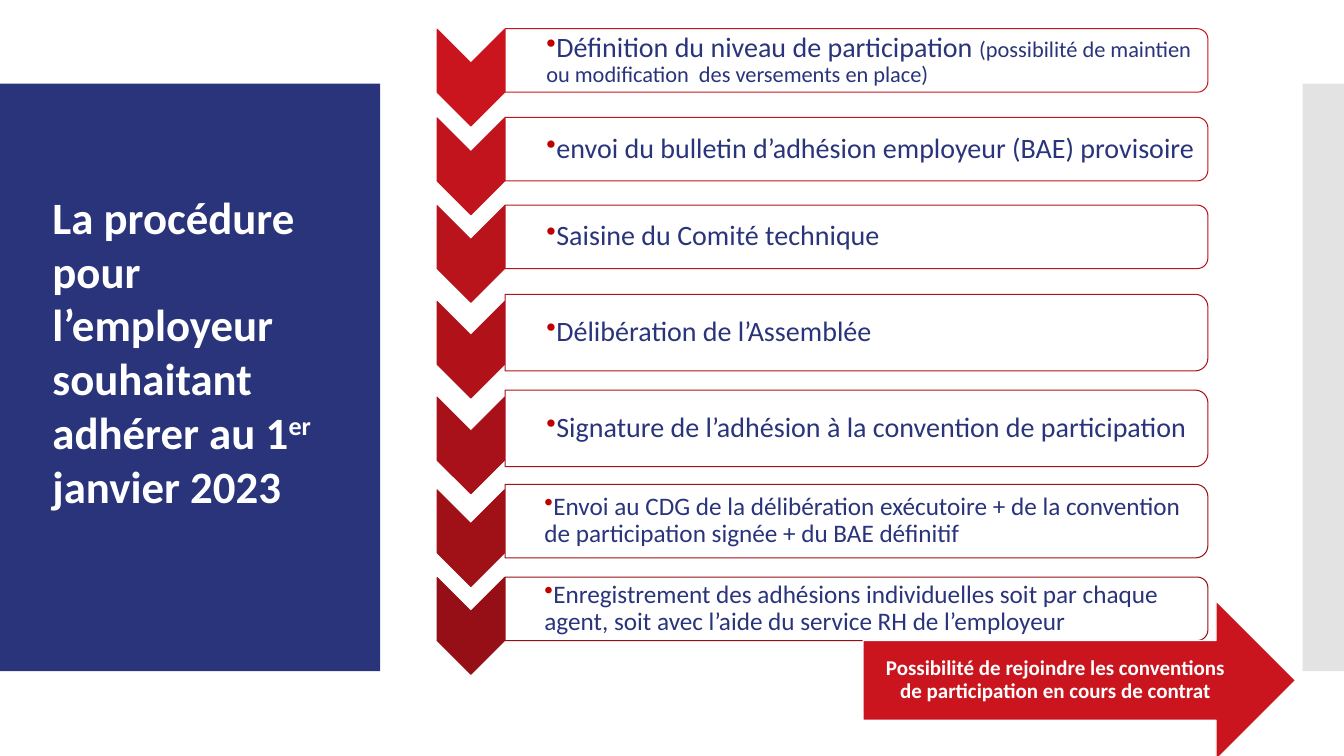
from dataclasses import dataclass

from lxml import etree
from pptx import Presentation
from pptx.dml.color import RGBColor
from pptx.enum.shapes import MSO_SHAPE
from pptx.enum.text import MSO_ANCHOR, MSO_AUTO_SIZE, PP_ALIGN
from pptx.oxml.ns import qn
from pptx.util import Emu, Pt

RECT, CHEVRON = MSO_SHAPE.RECTANGLE, MSO_SHAPE.CHEVRON
ROUND_TOP, ARROW = MSO_SHAPE.ROUND_2_SAME_RECTANGLE, MSO_SHAPE.RIGHT_ARROW
TOP, MIDDLE = MSO_ANCHOR.TOP, MSO_ANCHOR.MIDDLE
LEFT, CENTER = PP_ALIGN.LEFT, PP_ALIGN.CENTER
GROW = MSO_AUTO_SIZE.SHAPE_TO_FIT_TEXT

EMU_PER_PX = 9144  # 100 px to the inch


@dataclass(frozen=True)
class Theme:
    font: str = "Calibri"
    navy: str = "29347B"
    white: str = "FFFFFF"
    grey: str = "C8C8C8"
    bullet: str = "C00000"
    red_first: tuple = (202, 21, 30)
    red_last: tuple = (151, 15, 22)
    title: int = 32
    step: int = 20
    long_step: int = 18
    detail: int = 16
    callout: int = 15


THEME = Theme()

CHEVRON_X, BAR_X = 467, 501
CHEVRON_LONG, CHEVRON_WIDE, CHEVRON_DROP = 96, 67, 17
BAR_WIDTH = 697

# Centre y and height of the bar, left inset, then (text, size) runs
STEPS = [
    (60, 63, 16, [("Définition du niveau de participation ", THEME.step),
                  ("(possibilité de maintien ou modification  des versements en place)",
                   THEME.detail)]),
    (148, 63, 16, [("envoi du bulletin d’adhésion employeur (BAE) provisoire", THEME.step)]),
    (235, 63, 16, [("Saisine du Comité technique", THEME.step)]),
    (330, 76, 16, [("Délibération de l’Assemblée", THEME.step)]),
    (425, 76, 16, [("Signature de l’adhésion à la convention de participation", THEME.step)]),
    (517, 73, 14, [("Envoi au CDG de la délibération exécutoire + de la convention "
                    "de participation signée + du BAE définitif", THEME.long_step)]),
    (604, 63, 14, [("Enregistrement des adhésions individuelles soit par chaque agent, "
                    "soit avec l’aide du service RH de l’employeur", THEME.long_step)]),
]


def px(n):
    return Emu(round(n * EMU_PER_PX))


def rgb(color):
    return RGBColor.from_string(color)


def step_red(i):
    """Shade of red for step i, evenly spaced from first to last."""
    t = i / (len(STEPS) - 1)
    return "".join(f"{int(a + (b - a) * t + 0.5):02X}"
                   for a, b in zip(THEME.red_first, THEME.red_last))


def add_box(s, kind, x, y, w, h, fill, line=None, line_pt=0.75, alpha=None):
    sp = s.shapes.add_shape(kind, px(x), px(y), px(w), px(h))
    sp.shadow.inherit = False
    sp.fill.solid()
    sp.fill.fore_color.rgb = rgb(fill)
    if alpha is not None:
        color = sp.element.spPr.find(qn("a:solidFill"))[0]
        etree.SubElement(color, qn("a:alpha")).set("val", str(alpha * 1000))
    if line:
        sp.line.color.rgb = rgb(line)
        sp.line.width = Pt(line_pt)
    else:
        sp.line.fill.background()
    return sp


def add_turned(s, kind, cx, cy, w, h, fill, line, alpha=None):
    """Shape turned a quarter clockwise; w and h are its size before turning."""
    sp = add_box(s, kind, cx - w / 2, cy - h / 2, w, h, fill, line, alpha=alpha)
    sp.rotation = 90


def set_frame(tf, anchor, insets):
    tf.word_wrap = True
    tf.vertical_anchor = anchor
    tf.margin_left, tf.margin_top, tf.margin_right, tf.margin_bottom = map(px, insets)


def style(p, color, size=None, bold=False, align=LEFT, spacing=0.9):
    p.alignment, p.line_spacing = align, spacing
    p.font.name, p.font.bold = THEME.font, bold
    p.font.color.rgb = rgb(color)
    if size:
        p.font.size = Pt(size)


def add_bullet(p, indent, color):
    pPr = p._p.get_or_add_pPr()
    pPr.set("marL", str(px(indent)))
    pPr.set("indent", "0")
    bu_color = etree.Element(qn("a:buClr"))
    etree.SubElement(bu_color, qn("a:srgbClr")).set("val", color)
    bu_char = etree.Element(qn("a:buChar"))
    bu_char.set("char", "•")
    # Bullet settings stand before the default run properties
    pPr.find(qn("a:defRPr")).addprevious(bu_color)
    bu_color.addnext(bu_char)


def add_step(s, i, cy, h, inset, runs):
    red = step_red(i)
    add_turned(s, CHEVRON, CHEVRON_X, cy + CHEVRON_DROP,
               CHEVRON_LONG, CHEVRON_WIDE, red, red)
    add_turned(s, ROUND_TOP, BAR_X + BAR_WIDTH / 2, cy, h, BAR_WIDTH,
               THEME.white, red, alpha=90)
    text_h = h - 7
    tb = s.shapes.add_textbox(px(BAR_X), px(cy - text_h / 2), px(BAR_WIDTH - 3), px(text_h))
    set_frame(tb.text_frame, MIDDLE, (inset, 1, 1, 1))
    p = tb.text_frame.paragraphs[0]
    p.level = 1
    style(p, THEME.navy)
    add_bullet(p, 25, THEME.bullet)
    for text, size in runs:
        r = p.add_run()
        r.text = text
        r.font.size = Pt(size)


def add_title(s):
    title = s.shapes.title
    title.left, title.top, title.width, title.height = map(px, (42, 183, 320, 333))
    tf = title.text_frame
    set_frame(tf, TOP, (10, 5, 10, 5))
    tf.auto_size = GROW
    p = tf.paragraphs[0]
    style(p, THEME.white, THEME.title, bold=True, spacing=1.0)
    for text, baseline in (("La procédure pour l’employeur souhaitant adhérer au 1", 0),
                           ("er", 30000), (" janvier 2023", 0)):
        r = p.add_run()
        r.text = text
        if baseline:
            r._r.get_or_add_rPr().set("baseline", str(baseline))
    return title


def add_callout(s):
    arrow = add_box(s, ARROW, 856, 596, 429, 158, step_red(0), THEME.white, 0.85)
    set_frame(arrow.text_frame, MIDDLE, (15, 0, 23, 0))
    p = arrow.text_frame.paragraphs[0]
    p.text = "Possibilité de rejoindre les conventions de participation en cours de contrat"
    style(p, THEME.white, THEME.callout, bold=True, align=CENTER)


def main():
    prs = Presentation()
    prs.slide_width, prs.slide_height = px(1333), px(750)
    s = prs.slides.add_slide(prs.slide_layouts[5])
    title = add_title(s)
    panels = (add_box(s, RECT, 0, 83, 377, 583, THEME.navy),
              add_box(s, RECT, 1292, 83, 41, 583, THEME.grey, alpha=50))
    for panel in panels:
        title.element.addprevious(panel.element)  # panels lie behind the title
    for i, step in enumerate(STEPS):
        add_step(s, i, *step)
    add_callout(s)
    prs.save("out.pptx")


if __name__ == "__main__":
    main()
